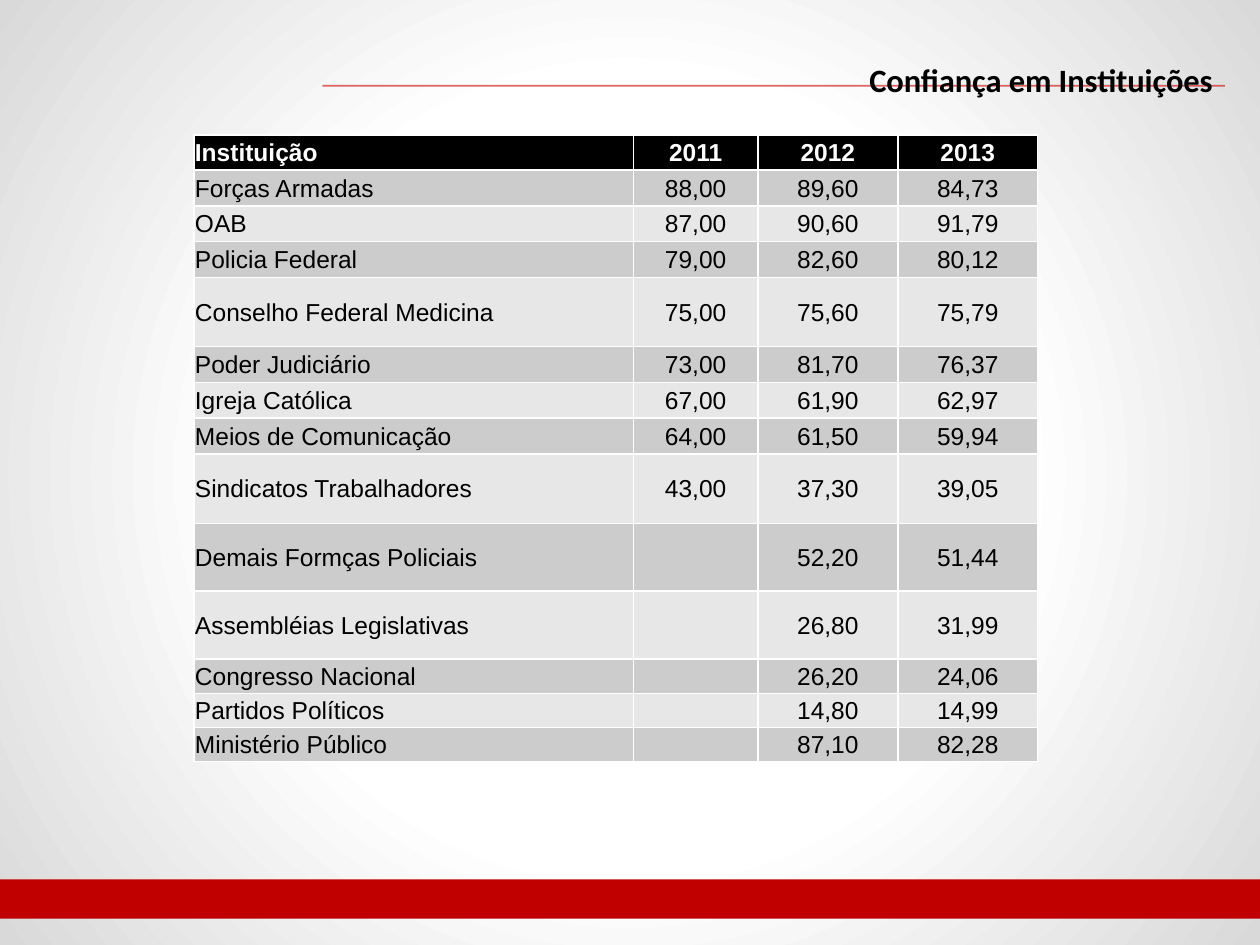
"""Build the slide on confidence in institutions."""
from dataclasses import dataclass
from typing import NamedTuple

from lxml.etree import SubElement
from pptx import Presentation
from pptx.dml.color import RGBColor as Rgb
from pptx.enum.shapes import MSO_CONNECTOR as Connector, MSO_SHAPE as Preset
from pptx.enum.text import MSO_ANCHOR as Anchor, MSO_AUTO_SIZE as AutoSize, PP_ALIGN as Align
from pptx.oxml import parse_xml
from pptx.oxml.ns import nsdecls, qn
from pptx.util import Cm, Pt


@dataclass(frozen=True)
class Theme:
    """Colours, fonts and type sizes of the slide."""
    white: str = "FFFFFF"
    black: str = "000000"
    edge: str = "D9D9D9"
    band: str = "C00000"
    rule: str = "CC0000"
    dark_row: str = "CCCCCC"
    light_row: str = "E7E7E7"
    title_font: str = "Calibri"
    table_font: str = "Arial"
    title_size: int = 32
    table_size: int = 14


class Area(NamedTuple):
    """A rectangle in centimetres."""
    left: float
    top: float
    width: float
    height: float


class Row(NamedTuple):
    """A table row with its height in centimetres."""
    height: float
    name: str
    values: tuple[str, str, str]


THEME = Theme()
WIDTH, HEIGHT = 25.4, 19.05
TITLE_AREA = Area(6.5, 0.33, 18.2, 1.17)
COLUMN_WIDTHS = (8.86, 2.51, 2.82, 2.82)
ROWS = (
    Row(0.71, "Instituição", ("2011", "2012", "2013")),
    Row(0.72, "Forças Armadas", ("88,00", "89,60", "84,73")),
    Row(0.72, "OAB", ("87,00", "90,60", "91,79")),
    Row(0.72, "Policia Federal", ("79,00", "82,60", "80,12")),
    Row(1.4, "Conselho Federal Medicina", ("75,00", "75,60", "75,79")),
    Row(0.72, "Poder Judiciário", ("73,00", "81,70", "76,37")),
    Row(0.72, "Igreja Católica", ("67,00", "61,90", "62,97")),
    Row(0.72, "Meios de Comunicação", ("64,00", "61,50", "59,94")),
    Row(1.4, "Sindicatos Trabalhadores", ("43,00", "37,30", "39,05")),
    Row(1.37, "Demais Formças Policiais", ("", "52,20", "51,44")),
    Row(1.37, "Assembléias Legislativas", ("", "26,80", "31,99")),
    Row(0.69, "Congresso Nacional", ("", "26,20", "24,06")),
    Row(0.69, "Partidos Políticos", ("", "14,80", "14,99")),
    Row(0.69, "Ministério Público", ("", "87,10", "82,28")),
)


def apply_format(target, values: dict) -> None:
    """Set each named attribute on the target."""
    for name, value in values.items():
        setattr(target, name, value)


def place(shape, area: Area) -> None:
    """Move and size a shape."""
    apply_format(shape, {name: Cm(value) for name, value in area._asdict().items()})


def write(para, text: str, align, color: str, values: dict) -> None:
    """Add one formatted span of text to a paragraph."""
    para.alignment = align
    span = para.add_run()
    span.text = text
    apply_format(span.font, values)
    span.font.color.rgb = Rgb.from_string(color)


def add_block(page, area: Area, color: str):
    """Draw a plain rectangle without outline."""
    block = page.shapes.add_shape(Preset.RECTANGLE, *map(Cm, area))
    block.shadow.inherit = False
    block.fill.solid()
    block.fill.fore_color.rgb = Rgb.from_string(color)
    block.line.fill.background()
    return block


def add_backdrop(page) -> None:
    """Cover the page with a gradient that darkens towards the corners."""
    backdrop = add_block(page, Area(0, 0, WIDTH, HEIGHT), THEME.white)
    stops = ((0, THEME.white), (50, THEME.white), (100, THEME.edge))
    stop_xml = "".join(
        f'<a:gs pos="{pos * 1000}"><a:srgbClr val="{color}"/></a:gs>' for pos, color in stops
    )
    gradient = parse_xml(
        f'<a:gradFill {nsdecls("a")} rotWithShape="1"><a:gsLst>{stop_xml}</a:gsLst>'
        '<a:path path="circle"><a:fillToRect l="50000" t="50000" r="50000" b="50000"/>'
        "</a:path></a:gradFill>"
    )
    properties = backdrop.element.spPr
    properties.replace(properties.find(qn("a:solidFill")), gradient)


def add_rule(page, left: float, right: float, top: float) -> None:
    """Draw the translucent line behind the title."""
    rule = page.shapes.add_connector(Connector.STRAIGHT, Cm(left), Cm(top), Cm(right), Cm(top))
    rule.line.width = Pt(1)
    rule.line.color.rgb = Rgb.from_string(THEME.rule)
    color = next(rule.element.spPr.iter(qn("a:srgbClr")))
    SubElement(color, qn("a:alpha"), val="60000")
    SubElement(rule.element.spPr, qn("a:effectLst"))


def add_title(page, text: str) -> None:
    """Fill the title placeholder and bring it in front of the backdrop."""
    title = page.shapes.title
    place(title, TITLE_AREA)
    apply_format(title.text_frame, {
        "word_wrap": True, "vertical_anchor": Anchor.TOP,
        "auto_size": AutoSize.SHAPE_TO_FIT_TEXT,
    })
    para = title.text_frame.paragraphs[0]
    write(para, text, Align.RIGHT, THEME.black, {
        "name": THEME.title_font, "size": Pt(THEME.title_size), "bold": True,
    })
    para.runs[0].font._element.set("baseline", "-25000")
    page.shapes.element.append(title.element)


def fill_cell(cell, text: str, align, fill: str, color: str, bold: bool) -> None:
    """Format one table cell and write its text."""
    apply_format(cell, {
        "margin_left": Cm(0.02), "margin_right": Cm(0.02), "margin_top": Cm(0.02),
        "margin_bottom": Cm(0), "vertical_anchor": Anchor.MIDDLE,
    })
    cell.fill.solid()
    cell.fill.fore_color.rgb = Rgb.from_string(fill)
    para = cell.text_frame.paragraphs[0]
    if text:
        write(para, text, align, color, {
            "name": THEME.table_font, "size": Pt(THEME.table_size), "bold": bold,
        })
    else:
        SubElement(para._p, qn("a:endParaRPr"), sz=str(THEME.table_size * 100))


def add_confidence_table(page, left: float, top: float) -> None:
    """Draw the table of institutions by year."""
    size = (sum(COLUMN_WIDTHS), sum(row.height for row in ROWS))
    frame = page.shapes.add_table(
        len(ROWS), len(COLUMN_WIDTHS), *map(Cm, Area(left, top, *size))
    )
    table = frame.table
    for column, width in zip(table.columns, COLUMN_WIDTHS):
        column.width = Cm(width)
    for index, row in enumerate(ROWS):
        table.rows[index].height = Cm(row.height)
        header = index == 0
        stripe = THEME.dark_row if index % 2 else THEME.light_row
        fill = THEME.black if header else stripe
        color = THEME.white if header else THEME.black
        for position, text in enumerate((row.name, *row.values)):
            align = Align.CENTER if position else Align.LEFT
            fill_cell(table.cell(index, position), text, align, fill, color, header)


def main() -> None:
    """Build and save the deck."""
    deck = Presentation()
    apply_format(deck, {"slide_width": Cm(WIDTH), "slide_height": Cm(HEIGHT)})
    page = deck.slides.add_slide(deck.slide_layouts.get_by_name("Title Only"))
    add_backdrop(page)
    add_rule(page, 6.5, 24.69, 1.73)
    add_block(page, Area(-0.1, 17.73, 25.5, 0.79), THEME.band)
    add_title(page, "Confiança em Instituições")
    add_confidence_table(page, 3.91, 2.72)
    deck.save("out.pptx")


if __name__ == "__main__":
    main()
